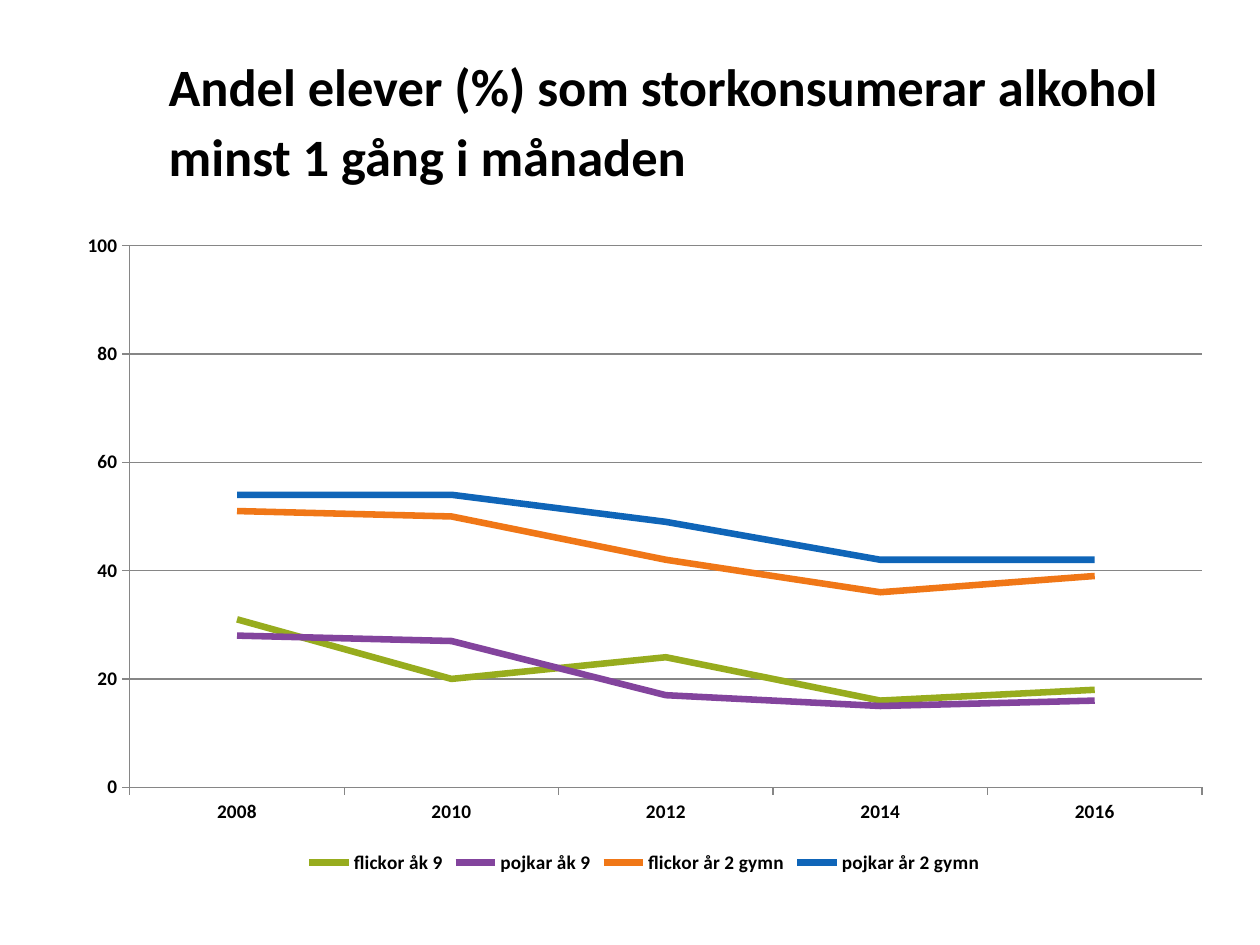
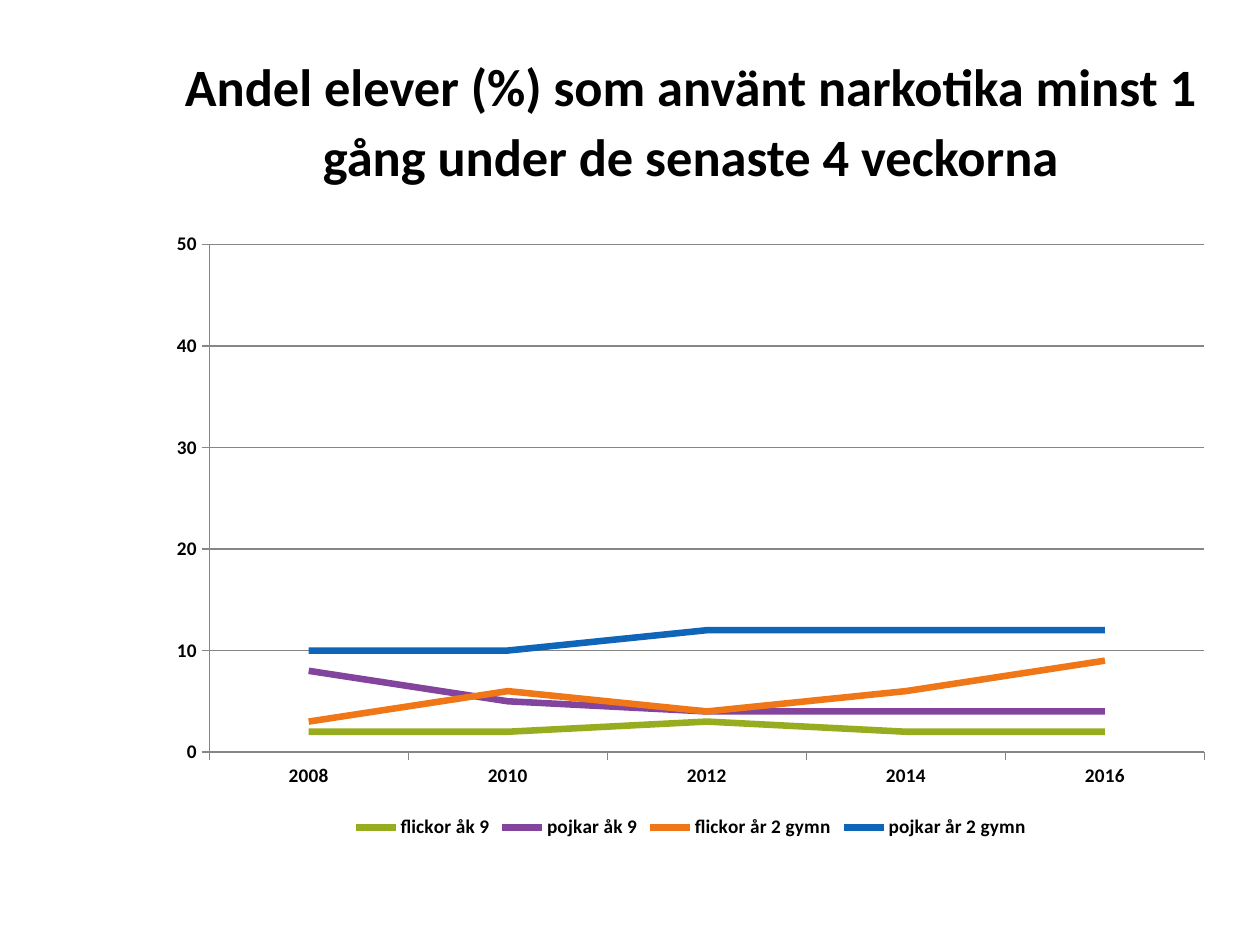
from pptx import Presentation
from pptx import util as u
from pptx.chart.data import CategoryChartData
from pptx.dml.color import RGBColor
from pptx.enum import chart as ch, text
from pptx.oxml import parse_xml
from pptx.oxml.ns import nsdecls, qn

FONT = "Calibri"
COLORS = {
    "text": "000000",
    "axis": "868686",
    "flickor åk 9": "97AC1E",
    "pojkar åk 9": "83449D",
    "flickor år 2 gymn": "F07717",
    "pojkar år 2 gymn": "0F65B8",
}
GROUPS = [name for name in COLORS if name not in ("text", "axis")]
YEARS = ["2008", "2010", "2012", "2014", "2016"]
TITLE_BOX = (1.24, 0.3, 8.49, 1.25)

# "chart" and "plot" are left, top, width, height in inches on the slide.
SURVEYS = [
    {
        "title": "Andel elever (%) som storkonsumerar alkohol minst 1 gång i månaden",
        "align": text.PP_ALIGN.LEFT,
        "chart": (0.51, 1.75, 9.21, 5.23),
        "plot": (1.03, 1.95, 8.51, 4.3),
        "scale": {"maximum_scale": 100, "major_unit": 20},
        "shares": [
            (31, 20, 24, 16, 18),
            (28, 27, 17, 15, 16),
            (51, 50, 42, 36, 39),
            (54, 54, 49, 42, 42),
        ],
    },
    {
        "title": "Andel elever (%) som använt narkotika minst 1 gång under de senaste 4 veckorna",
        "align": text.PP_ALIGN.CENTER,
        "chart": (1.24, 1.75, 8.49, 4.95),
        "plot": (1.66, 1.94, 7.9, 4.03),
        "scale": {"maximum_scale": 50, "major_unit": 10},
        "shares": [
            (2, 2, 3, 2, 2),
            (8, 5, 4, 4, 4),
            (3, 6, 4, 6, 9),
            (10, 10, 12, 12, 12),
        ],
    },
]


def set_all(target, values):
    for name, value in values.items():
        setattr(target, name, value)


def style_font(font, size):
    set_all(font, {"name": FONT, "size": u.Pt(size), "bold": True})
    font.color.rgb = RGBColor.from_string(COLORS["text"])


def style_line(line, color, width):
    line.color.rgb = RGBColor.from_string(COLORS[color])
    line.width = u.Pt(width)


def add_title(slide, wording, align):
    frame = slide.shapes.add_textbox(*map(u.Inches, TITLE_BOX)).text_frame
    set_all(frame, {"word_wrap": True, "vertical_anchor": text.MSO_ANCHOR.MIDDLE})
    heading = frame.paragraphs[0]
    set_all(heading, {"text": wording, "alignment": align, "line_spacing": u.Pt(40)})
    style_font(heading.runs[0].font, 30)


def place_plot(chart, chart_box, plot_box):
    """Fix the area inside the axes, given in slide inches."""
    left, top, width, height = chart_box
    x, y, w, h = plot_box
    shares = {"x": (x - left) / width, "y": (y - top) / height,
              "w": w / width, "h": h / height}
    places = "".join(f'<c:{side} val="{share:.4f}"/>' for side, share in shares.items())
    plot_area = chart.element.find(".//" + qn("c:plotArea"))
    for automatic in plot_area.findall(qn("c:layout")):
        plot_area.remove(automatic)
    plot_area.insert(0, parse_xml(
        f'<c:layout {nsdecls("c")}><c:manualLayout><c:layoutTarget val="inner"/>'
        f'<c:xMode val="edge"/><c:yMode val="edge"/>{places}'
        '</c:manualLayout></c:layout>'))


def style_axes(chart, scale):
    for axis in (chart.category_axis, chart.value_axis):
        axis.major_tick_mark = ch.XL_TICK_MARK.OUTSIDE
        style_line(axis.format.line, "axis", 0.75)
    share_axis = chart.value_axis
    set_all(share_axis, {"minimum_scale": 0, "has_major_gridlines": True, **scale})
    style_line(share_axis.major_gridlines.format.line, "axis", 0.75)


def add_trend_chart(slide, survey):
    trends = CategoryChartData()
    trends.categories = YEARS
    for group, shares in zip(GROUPS, survey["shares"]):
        trends.add_series(group, shares)
    chart = slide.shapes.add_chart(
        ch.XL_CHART_TYPE.LINE, *map(u.Inches, survey["chart"]), trends).chart
    set_all(chart, {"has_title": False, "has_legend": True})
    set_all(chart.legend, {"position": ch.XL_LEGEND_POSITION.BOTTOM,
                           "include_in_layout": False})
    style_font(chart.font, 11)
    style_axes(chart, survey["scale"])
    chart.plots[0].vary_by_categories = False
    for trend in chart.plots[0].series:
        trend.smooth = False
        trend.marker.style = ch.XL_MARKER_STYLE.NONE
        style_line(trend.format.line, trend.name, 3.75)
    place_plot(chart, survey["chart"], survey["plot"])


def main():
    deck = Presentation()
    set_all(deck, {"slide_width": u.Inches(10), "slide_height": u.Inches(7.5)})
    for survey in SURVEYS:
        slide = deck.slides.add_slide(deck.slide_layouts[6])
        add_title(slide, survey["title"], survey["align"])
        add_trend_chart(slide, survey)
    deck.save("out.pptx")


if __name__ == "__main__":
    main()
